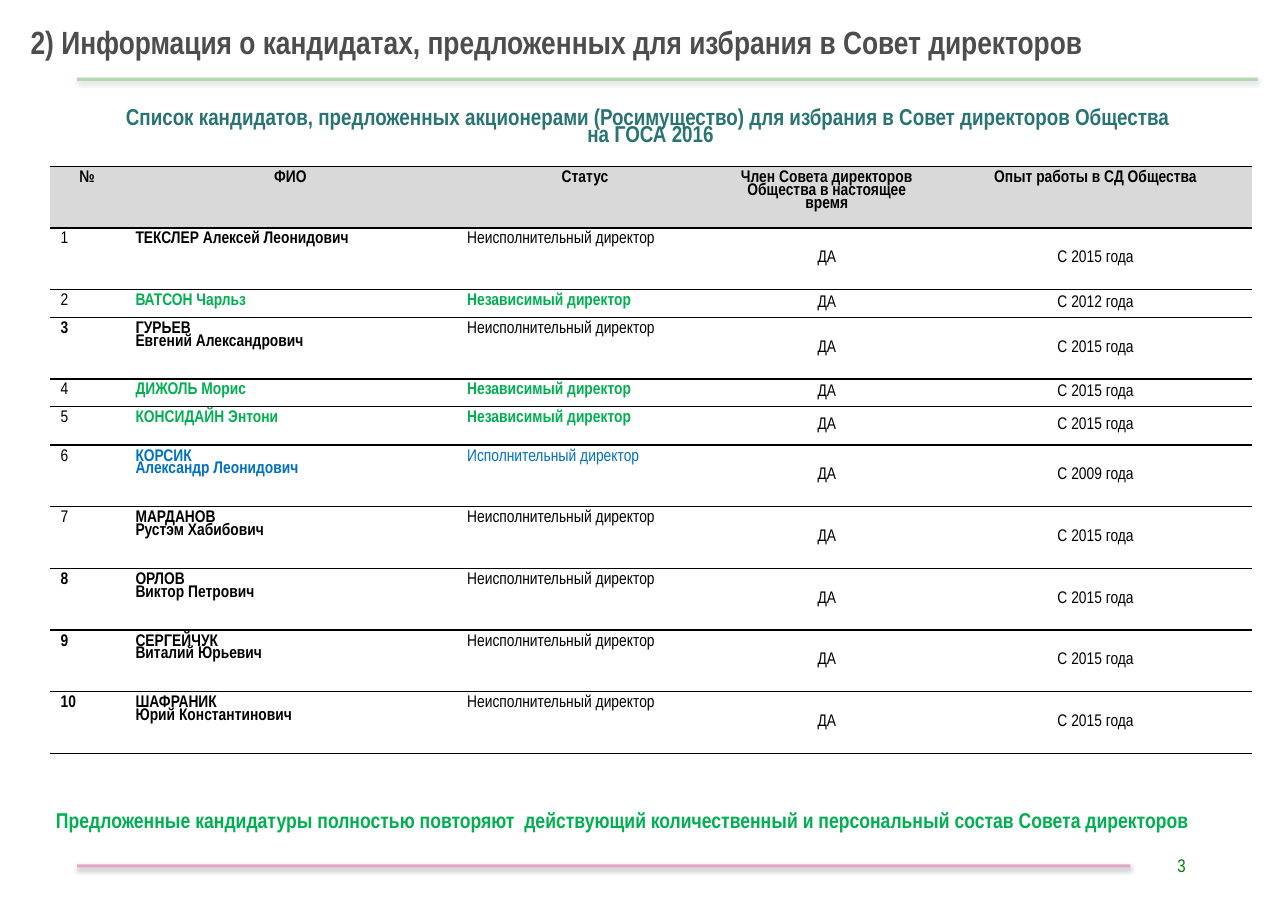
from lxml import etree
from pptx import Presentation
from pptx.dml.color import RGBColor
from pptx.enum import shapes, text
from pptx.oxml import parse_xml
from pptx.oxml.ns import nsdecls, qn
from pptx.util import Inches, Pt

FONT = "Arial Narrow"
BLACK = RGBColor(0x00, 0x00, 0x00)
GRAY = RGBColor(0x4D, 0x4D, 0x4D)
HEADER_FILL = RGBColor(0xD9, 0xD9, 0xD9)
TEAL = RGBColor(0x28, 0x74, 0x73)
GREEN = RGBColor(0x00, 0xB0, 0x50)
BLUE = RGBColor(0x00, 0x70, 0xC0)
NUMBER_GREEN = RGBColor(0x00, 0x80, 0x00)
RULE_GREEN = RGBColor(0x9A, 0xCC, 0x99)
RULE_PINK = RGBColor(0xDF, 0x8E, 0xB9)
LEFT, CENTER, RIGHT = text.PP_ALIGN.LEFT, text.PP_ALIGN.CENTER, text.PP_ALIGN.RIGHT
TOP, MIDDLE = text.MSO_ANCHOR.TOP, text.MSO_ANCHOR.MIDDLE
NO_GRID_STYLE = "{2D5ABB26-0587-4C30-8999-92F81FD0307C}"


def write(frame, lines, size, color, bold=False, align=LEFT, spacing=None):
    """Fill a text frame with one paragraph per line."""
    frame.word_wrap = True
    for index, line in enumerate(lines.split("\n")):
        para = frame.paragraphs[0] if index == 0 else frame.add_paragraph()
        para.text = line
        para.alignment = align
        para.line_spacing = spacing
        para.font.name = FONT
        para.font.size = Pt(size)
        para.font.bold = bold
        para.font.color.rgb = color


def write_cell(cell, lines, size, color, bold, align, anchor):
    """Write a table cell and draw the rule under it."""
    write(cell.text_frame, lines, size, color, bold, align, spacing=0.82)
    cell.vertical_anchor = anchor
    cell._tc.get_or_add_tcPr().insert(0, parse_xml(
        f'<a:lnB {nsdecls("a")} w="12700"><a:solidFill><a:srgbClr val="{BLACK}"/>'
        '</a:solidFill><a:prstDash val="solid"/></a:lnB>'))


deck = Presentation()
deck.slide_width, deck.slide_height = Inches(11.69), Inches(8.27)
page = deck.slides.add_slide(deck.slide_layouts[6])

# Rules at the head and foot of the page
for y, right, color in [(7.86, 10.26, RULE_PINK), (0.72, 11.42, RULE_GREEN)]:
    rule = page.shapes.add_connector(
        shapes.MSO_CONNECTOR.STRAIGHT, Inches(0.7), Inches(y), Inches(right), Inches(y))
    rule.line.color.rgb = color
    rule.line.width = Pt(2)
    rule_color = rule._element.spPr.find(".//" + qn("a:srgbClr"))
    etree.SubElement(rule_color, qn("a:alpha"), val="70000")
    rule._element.spPr.append(parse_xml(
        f'<a:effectLst {nsdecls("a")}><a:outerShdw blurRad="39370" dist="20320" dir="5400000" '
        'rotWithShape="0"><a:srgbClr val="000000"><a:alpha val="38000"/></a:srgbClr>'
        '</a:outerShdw></a:effectLst>'))

# Title, page number and conclusion
title = page.shapes.add_textbox(Inches(0.18), Inches(0.2), Inches(10.87), Inches(0.57)).text_frame
title.margin_left = Inches(0.1)
title.margin_right = title.margin_top = title.margin_bottom = 0
write(title, "2) Информация о кандидатах, предложенных для избрания в Совет директоров",
      21, GRAY, bold=True)

number = page.shapes.add_textbox(Inches(10.32), Inches(7.65), Inches(0.54), Inches(0.4)).text_frame
number.vertical_anchor = MIDDLE
write(number, "3", 12, NUMBER_GREEN, align=RIGHT)

conclusion = page.shapes.add_textbox(
    Inches(0.41), Inches(7.28), Inches(10.95), Inches(0.34)).text_frame
write(conclusion, "Предложенные кандидатуры полностью повторяют  действующий количественный "
      "и персональный состав Совета директоров", 14, GREEN, bold=True)

# Table of candidates: name, status, first year on the board, bold number, row height
NON_EXECUTIVE = "Неисполнительный директор"
INDEPENDENT = "Независимый директор"
EXECUTIVE = "Исполнительный директор"
STATUS_COLORS = {NON_EXECUTIVE: BLACK, INDEPENDENT: GREEN, EXECUTIVE: BLUE}
candidates = [
    ("ТЕКСЛЕР Алексей Леонидович", NON_EXECUTIVE, 2015, False, 0.56),
    ("ВАТСОН Чарльз", INDEPENDENT, 2012, False, 0.24),
    ("ГУРЬЕВ\nЕвгений Александрович", NON_EXECUTIVE, 2015, True, 0.56),
    ("ДИЖОЛЬ Морис", INDEPENDENT, 2015, False, 0.24),
    ("КОНСИДАЙН Энтони", INDEPENDENT, 2015, False, 0.35),
    ("КОРСИК\nАлександр Леонидович", EXECUTIVE, 2009, False, 0.56),
    ("МАРДАНОВ\nРустэм Хабибович", NON_EXECUTIVE, 2015, False, 0.56),
    ("ОРЛОВ\nВиктор Петрович", NON_EXECUTIVE, 2015, True, 0.56),
    ("СЕРГЕЙЧУК\nВиталий Юрьевич", NON_EXECUTIVE, 2015, True, 0.56),
    ("ШАФРАНИК\nЮрий Константинович", NON_EXECUTIVE, 2015, True, 0.56),
]
headings = ["№", "ФИО", "Статус", "Член Совета директоров Общества в настоящее время",
            "Опыт работы в СД Общества"]
widths = [0.68, 3.01, 2.34, 2.05, 2.83]
heights = [0.68, 0.56] + [candidate[-1] for candidate in candidates]

table = page.shapes.add_table(len(heights), len(widths), Inches(0.45), Inches(0.83),
                              Inches(sum(widths)), Inches(sum(heights))).table
table.first_row = table.horz_banding = False
table._tbl.tblPr.find(qn("a:tableStyleId")).text = NO_GRID_STYLE
for column, width in zip(table.columns, widths):
    column.width = Inches(width)
for row, height in zip(table.rows, heights):
    row.height = Inches(height)

table.cell(0, 0).merge(table.cell(0, len(widths) - 1))
caption = ("Список кандидатов, предложенных акционерами (Росимущество) для избрания "
           "в Совет директоров Общества \nна ГОСА 2016")
for column, heading in enumerate(headings):
    write_cell(table.cell(0, column), "" if column else caption, 15, TEAL, True, CENTER, MIDDLE)
    cell = table.cell(1, column)
    write_cell(cell, heading, 11, BLACK, True, CENTER, TOP)
    cell.fill.solid()
    cell.fill.fore_color.rgb = HEADER_FILL

for order, (name, status, year, bold_number, _) in enumerate(candidates, 1):
    color = STATUS_COLORS[status]
    entries = [
        (str(order), BLACK, bold_number, LEFT, TOP),
        (name, color, True, LEFT, TOP),
        (status, color, status == INDEPENDENT, LEFT, TOP),
        ("ДА", BLACK, False, CENTER, MIDDLE),
        (f"С {year} года", BLACK, False, CENTER, MIDDLE),
    ]
    for column, (lines, *style) in enumerate(entries):
        write_cell(table.cell(order + 1, column), lines, 11, *style)

deck.save("out.pptx")
